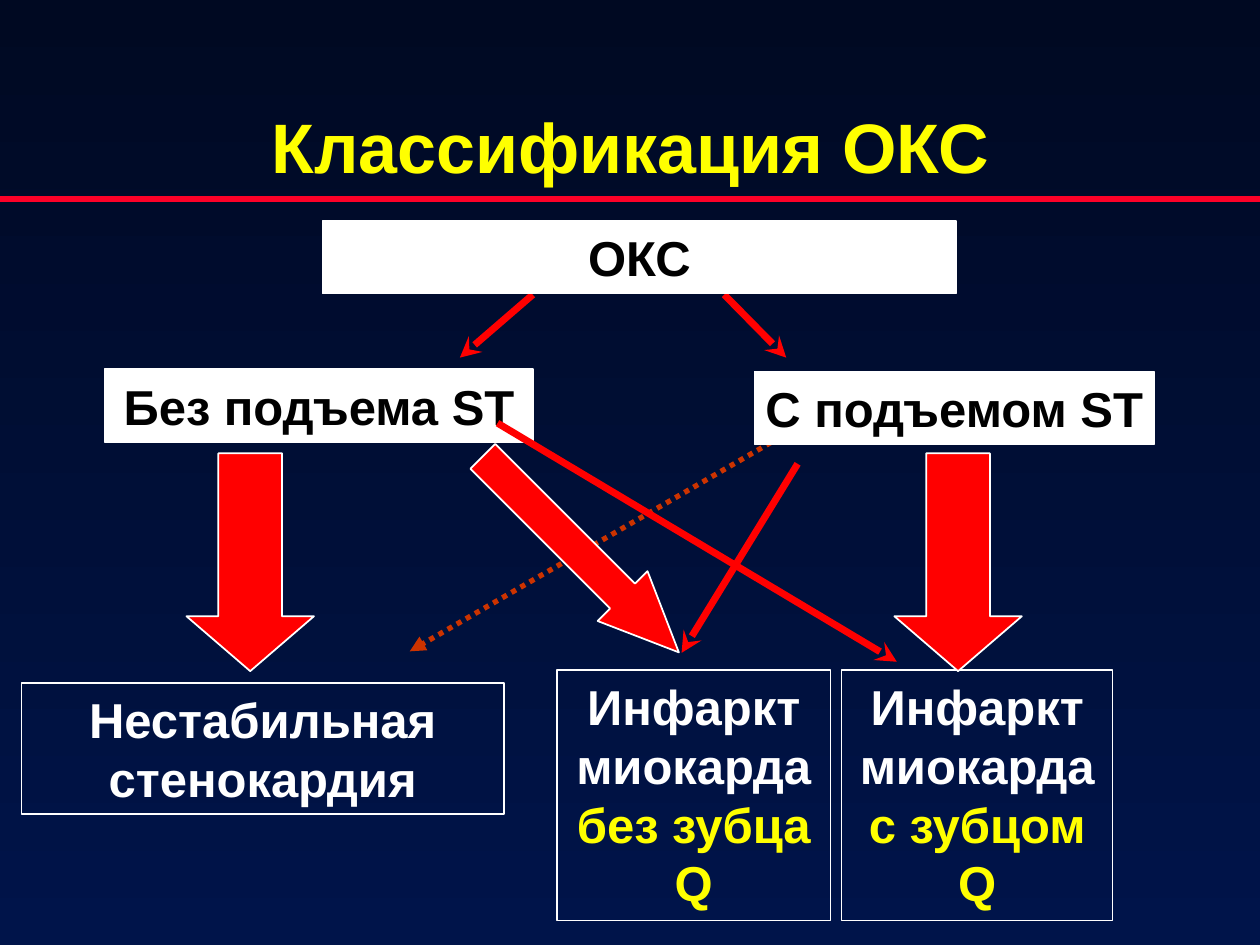
from dataclasses import dataclass

from lxml import etree
from pptx import Presentation
from pptx import util as u
from pptx.dml.color import RGBColor
from pptx.enum import dml, shapes, text
from pptx.oxml import ns

WHITE, BLACK, YELLOW, RED = "FFFFFF", "000000", "FFFF00", "FF0000"
Run = tuple[str, str]  # text and colour


@dataclass
class Box:
    left: float
    top: float
    width: float
    height: float
    paragraphs: list[list[Run]]
    filled: bool = False


@dataclass
class Line:
    start: tuple[float, float]
    end: tuple[float, float]
    color: str = RED
    weight: float = 4
    head: str = "stealth"
    dotted: bool = False


@dataclass
class BlockArrow:
    left: float
    top: float
    width: float
    height: float
    head_length: float
    rotation: float = 0


def rgb(value: str) -> RGBColor:
    return RGBColor.from_string(value)


def set_line(line, color: str, weight: float) -> None:
    line.color.rgb = rgb(color)
    line.width = u.Pt(weight)


def write_text(frame, paragraphs: list[list[Run]], size: float) -> None:
    for index, runs in enumerate(paragraphs):
        paragraph = frame.paragraphs[0] if index == 0 else frame.add_paragraph()
        paragraph.alignment = text.PP_ALIGN.CENTER
        for content, color in runs:
            run = paragraph.add_run()
            run.text = content
            run.font.name = "Arial"
            run.font.size = u.Pt(size)
            run.font.bold = True
            run.font.color.rgb = rgb(color)


def add_title(slide, content: str) -> None:
    shape = slide.shapes.add_textbox(u.Cm(2.11), u.Cm(1.7), u.Cm(21.59), u.Cm(2.11))
    frame = shape.text_frame
    frame.word_wrap = True
    frame.vertical_anchor = text.MSO_ANCHOR.BOTTOM
    frame.margin_left = frame.margin_right = frame.margin_top = frame.margin_bottom = 0
    write_text(frame, [[(content, YELLOW)]], 40)
    frame.paragraphs[0].line_spacing = 0.9


def add_box(slide, box: Box) -> None:
    shape = slide.shapes.add_shape(
        shapes.MSO_SHAPE.RECTANGLE,
        u.Cm(box.left), u.Cm(box.top), u.Cm(box.width), u.Cm(box.height))
    shape.shadow.inherit = False
    frame = shape.text_frame
    frame.word_wrap = not box.filled
    if box.filled:
        shape.fill.solid()
        shape.fill.fore_color.rgb = rgb(WHITE)
        frame.vertical_anchor = text.MSO_ANCHOR.MIDDLE
    else:
        shape.fill.background()
        frame.vertical_anchor = text.MSO_ANCHOR.TOP
        frame.auto_size = text.MSO_AUTO_SIZE.SHAPE_TO_FIT_TEXT
    set_line(shape.line, WHITE, 1 if box.filled else 0.75)
    write_text(frame, box.paragraphs, 28)


def add_line(slide, line: Line) -> None:
    connector = slide.shapes.add_connector(
        shapes.MSO_CONNECTOR.STRAIGHT,
        *(u.Cm(value) for value in line.start + line.end))
    set_line(connector.line, line.color, line.weight)
    if line.dotted:
        connector.line.dash_style = dml.MSO_LINE.ROUND_DOT
    if line.head:
        outline = connector.line._get_or_add_ln()
        etree.SubElement(outline, ns.qn("a:tailEnd"), type=line.head)
    etree.SubElement(connector._element.spPr, ns.qn("a:effectLst"))


def add_block_arrow(slide, arrow: BlockArrow) -> None:
    shape = slide.shapes.add_shape(
        shapes.MSO_SHAPE.DOWN_ARROW,
        u.Cm(arrow.left), u.Cm(arrow.top), u.Cm(arrow.width), u.Cm(arrow.height))
    shape.shadow.inherit = False
    shape.adjustments[0] = 0.5
    shape.adjustments[1] = arrow.head_length
    shape.rotation = arrow.rotation
    shape.fill.solid()
    shape.fill.fore_color.rgb = rgb(RED)
    set_line(shape.line, WHITE, 1)


def set_background(slide, top: str, bottom: str) -> None:
    fill = slide.background.fill
    fill.gradient()
    fill.gradient_angle = 270
    for stop, color in zip(fill.gradient_stops, (top, bottom)):
        stop.color.rgb = rgb(color)


TITLE_RULE = Line((0, 4.01), (25.4, 4.01), "FC0128", 3, head="")
RARE_OUTCOME = Line((15.54, 8.92), (8.26, 13.13), "CC3300", 3, "triangle", True)
BRANCHES = [
    Line((10.74, 5.94), (9.27, 7.21)),
    Line((14.6, 5.94), (15.85, 7.21)),
]
SYNDROMES = [
    Box(6.5, 4.45, 12.78, 1.47, [[("ОКС", BLACK)]], True),
    Box(2.11, 7.44, 8.64, 1.47, [[("Без подъема ST", BLACK)]], True),
    Box(15.21, 7.49, 8.05, 1.47, [[("С подъемом ST", BLACK)]], True),
]
INFARCTION = ("Инфаркт миокарда ", WHITE)
OUTCOMES = [
    Box(0.43, 13.77, 9.73, 2.64, [[("Нестабильная стенокардия", WHITE)]]),
    Box(11.23, 13.51, 5.51, 5.05, [[INFARCTION, ("без зубца Q", YELLOW)]]),
    Box(16.97, 13.51, 5.46, 5.05, [[INFARCTION], [("с зубцом Q", YELLOW)]]),
]
CROSSING_ARROWS = [
    Line((16.08, 9.35), (13.74, 13.16)),
    Line((10.03, 8.53), (18.08, 13.34)),
]
MAIN_ARROWS = [
    BlockArrow(3.76, 9.14, 2.57, 4.39, 0.43),
    BlockArrow(18.03, 9.14, 2.57, 4.39, 0.43),
    BlockArrow(11, 8.38, 1.42, 5.59, 1.13, 315),
]


def main() -> None:
    presentation = Presentation()
    presentation.slide_width, presentation.slide_height = u.Cm(25.4), u.Cm(19.05)
    slide = presentation.slides.add_slide(presentation.slide_layouts[6])
    set_background(slide, "000922", "00144A")
    add_line(slide, TITLE_RULE)
    add_line(slide, RARE_OUTCOME)
    add_title(slide, "Классификация ОКС ")
    for line in BRANCHES:
        add_line(slide, line)
    for box in SYNDROMES + OUTCOMES:
        add_box(slide, box)
    for line in CROSSING_ARROWS:
        add_line(slide, line)
    for arrow in MAIN_ARROWS:
        add_block_arrow(slide, arrow)
    presentation.save("out.pptx")


if __name__ == "__main__":
    main()
